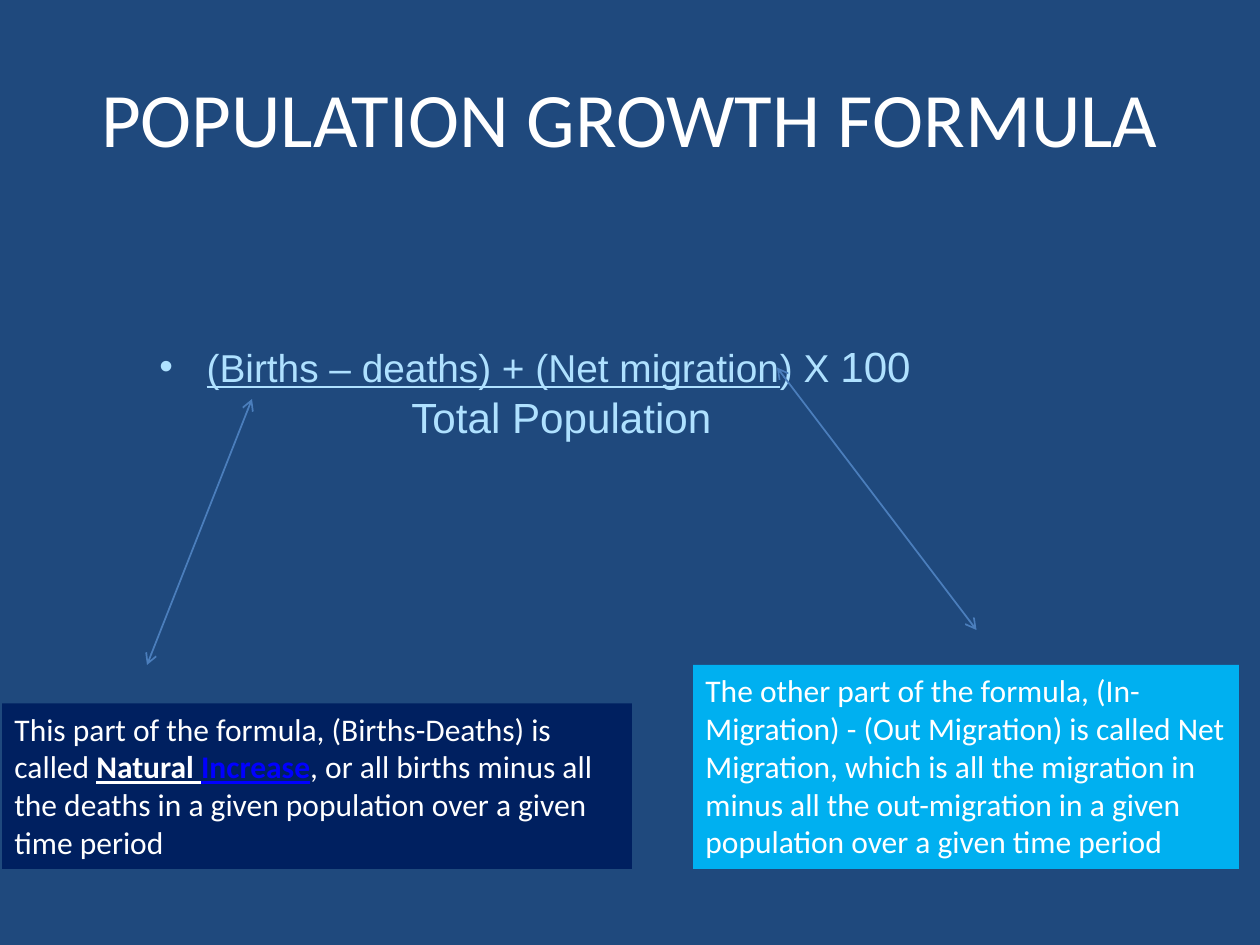
"""Build the population growth formula slide."""
from dataclasses import dataclass

import pptx
import pptx.dml.color
import pptx.enum.shapes
import pptx.enum.text
import pptx.oxml.xmlchemy
import pptx.util
from lxml import etree

Pt = pptx.util.Pt
ANCHOR = pptx.enum.text.MSO_ANCHOR
ALIGN = pptx.enum.text.PP_ALIGN
SHAPE = pptx.enum.shapes.MSO_SHAPE
LINE = pptx.enum.shapes.MSO_CONNECTOR
NS = "{http://schemas.openxmlformats.org/drawingml/2006/main}"


@dataclass(frozen=True)
class Theme:
    back: str = "1F497D"
    white: str = "FFFFFF"
    pale: str = "AFE1FF"
    navy: str = "002060"
    sky: str = "00B0F0"
    link: str = "0000FF"
    arrow: str = "4B7EBC"
    head: float = 44
    term: float = 22.2
    total: float = 24.1
    note: float = 18
    sans: str = "Calibri"
    math: str = "Arial"


T = Theme()


def rgb(code):
    return pptx.dml.color.RGBColor.from_string(code)


def style(run, face, size, color, bold=False, under=False):
    font = run.font
    font.name, font.size = face, Pt(size)
    font.bold, font.underline = bold, under
    font.color.rgb = rgb(color)


def add_run(para, text, *look, **marks):
    run = para.add_run()
    run.text = text
    style(run, *look, **marks)


def add_box(slide, left, top, width, height):
    box = slide.shapes.add_textbox(Pt(left), Pt(top), Pt(width), Pt(height))
    box.text_frame.word_wrap = True
    return box.text_frame


def add_title(slide, text):
    frame = add_box(slide, 36, 21.6, 648, 90)
    frame.vertical_anchor = ANCHOR.MIDDLE
    frame.text = text
    para = frame.paragraphs[0]
    para.alignment = ALIGN.CENTER
    style(para.runs[0], T.sans, T.head, T.white)


def indent(para, left, hang=0, mark=None):
    props = para._p.get_or_add_pPr()
    props.set("marL", str(Pt(left)))
    props.set("indent", str(-Pt(hang)))
    if mark:
        etree.SubElement(props, NS + "buFont", typeface=T.math)
        etree.SubElement(props, NS + "buChar", char=mark)


def add_ratio(slide):
    frame = add_box(slide, 84, 191, 600, 61)
    top = frame.paragraphs[0]
    indent(top, 27, 27, "•")
    add_run(top, "(Births – deaths) + (Net migration", T.math, T.term, T.pale, under=True)
    add_run(top, ") X ", T.math, T.term, T.pale)
    add_run(top, "100", T.math, T.total, T.pale)
    base = frame.add_paragraph()
    base.text = "Total Population"
    indent(base, 144)
    style(base.runs[0], T.math, T.total, T.pale)


def add_note(slide, left, top, width, height, fill, parts):
    card = slide.shapes.add_shape(
        SHAPE.RECTANGLE, Pt(left), Pt(top), Pt(width), Pt(height))
    card.shadow.inherit = False
    card.fill.solid()
    card.fill.fore_color.rgb = rgb(fill)
    card.line.fill.background()
    frame = card.text_frame
    frame.word_wrap = True
    frame.vertical_anchor = ANCHOR.TOP
    para = frame.paragraphs[0]
    para.alignment = ALIGN.LEFT
    for text, color, strong in parts:
        add_run(para, text, T.sans, T.note, color, bold=strong, under=strong)


def add_arrow(slide, *ends):
    line = slide.shapes.add_connector(LINE.STRAIGHT, *map(Pt, ends))
    line.line.color.rgb = rgb(T.arrow)
    line.line.width = Pt(1)
    stroke = line.line._get_or_add_ln()
    for end in ("headEnd", "tailEnd"):
        etree.SubElement(stroke, NS + end, type="arrow")
    etree.SubElement(line._element.spPr, NS + "effectLst")


def main():
    deck = pptx.Presentation()
    deck.slide_width, deck.slide_height = Pt(720), Pt(540)
    slide = deck.slides.add_slide(deck.slide_layouts[6])
    slide.background.fill.solid()
    slide.background.fill.fore_color.rgb = rgb(T.back)
    add_title(slide, "POPULATION GROWTH FORMULA")
    add_ratio(slide)
    add_arrow(slide, 444, 210, 558, 360)
    add_note(slide, 1.2, 402, 360, 94.5, T.navy, [
        ("This part of the formula, (Births-Deaths) is called ", T.white, False),
        ("Natural ", T.white, True),
        ("Increase", T.link, True),
        (", or all births minus all the deaths in a given population "
         "over a given time period", T.white, False),
    ])
    add_note(slide, 396, 380, 312, 116.5, T.sky, [
        ("The other part of the formula, (In-Migration) - (Out Migration) "
         "is called Net Migration, which is all the migration in minus all "
         "the out-migration in a given population over a given time period",
         T.white, False),
    ])
    add_arrow(slide, 144, 228, 84, 380)
    deck.save("out.pptx")


if __name__ == "__main__":
    main()
